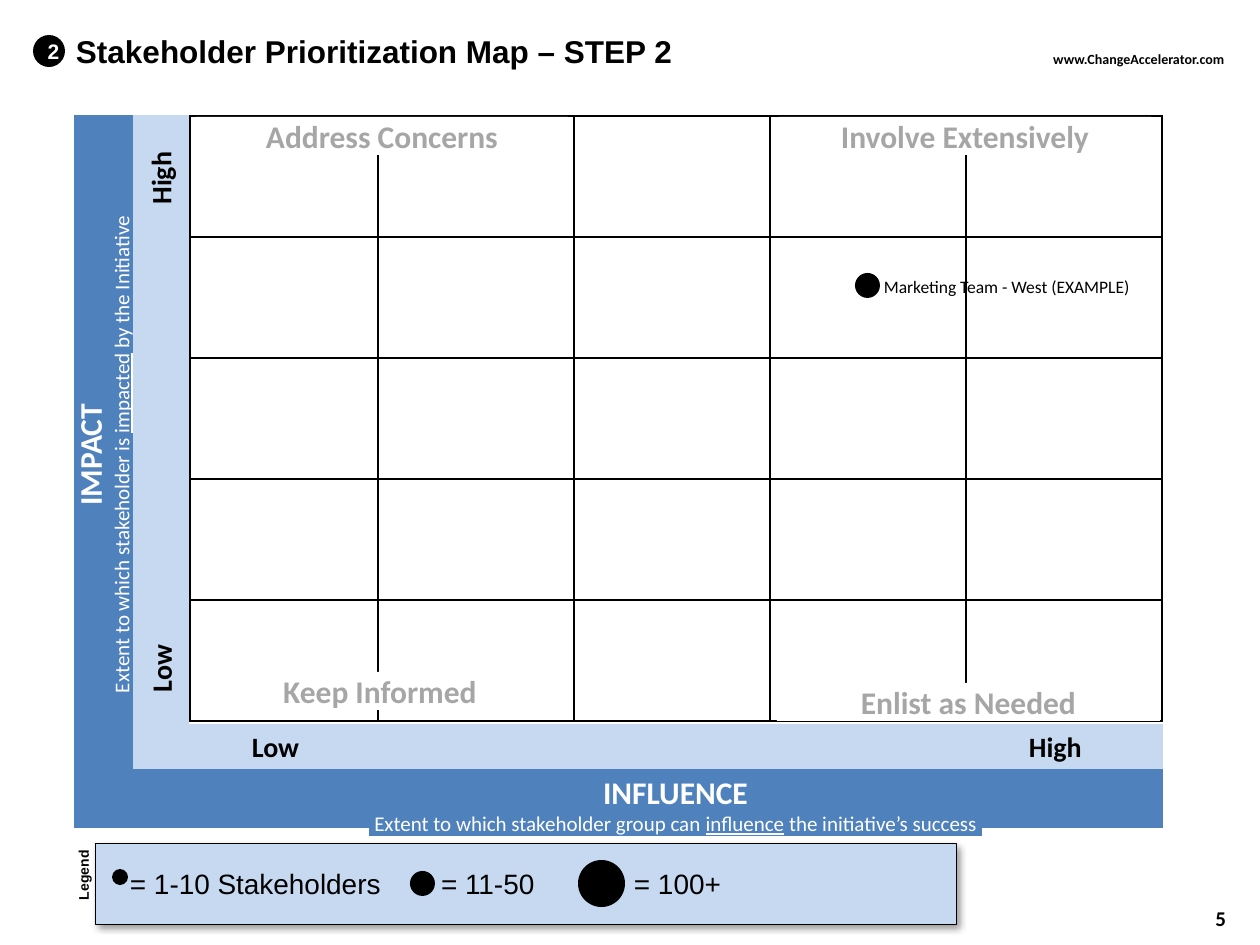
import pptx
import pptx.util
import pptx.dml.color
import pptx.enum.shapes
import pptx.enum.text
import pptx.oxml
import pptx.oxml.ns

SCALE = 914400 / 126
BLACK, WHITE, GREY = "000000", "FFFFFF", "A6A6A6"
BLUE, PALE = "4F81BD", "C6D9F1"
KIND = pptx.enum.shapes.MSO_SHAPE
ALIGN = {"l": pptx.enum.text.PP_ALIGN.LEFT, "c": pptx.enum.text.PP_ALIGN.CENTER,
         "r": pptx.enum.text.PP_ALIGN.RIGHT}
ANCHOR = pptx.enum.text.MSO_ANCHOR
PAD = (13, 6, 13, 6)
FLAT = (0, 0, 0, 0)


def px(n):
    return pptx.util.Emu(round(n * SCALE))


def color(code):
    return pptx.dml.color.RGBColor.from_string(code)


def node(tag, inner="", attrs=""):
    return pptx.oxml.parse_xml(
        f"<a:{tag} {pptx.oxml.ns.nsdecls('a')} {attrs}>{inner}</a:{tag}>")


def paint(fill, code):
    """Fill with a colour, or with nothing when code is None."""
    if code is None:
        fill.background()
    else:
        fill.solid()
        fill.fore_color.rgb = color(code)


def shape(slide, box, fill, kind=KIND.RECTANGLE):
    item = slide.shapes.add_shape(kind, *map(px, box))
    item.shadow.inherit = False
    paint(item.fill, fill)
    item.line.fill.background()
    return item


def dot(slide, box):
    return shape(slide, box, BLACK, KIND.OVAL)


def label(slide, box, turn=0):
    item = slide.shapes.add_textbox(*map(px, box))
    item.rotation = turn
    return item


def write(item, paras, size, ink=BLACK, font="Calibri", bold=False, align="l",
          pad=FLAT, wrap=False, middle=False, tabs=()):
    """Write paragraphs made of (text, changes) runs; a run of "\\n" breaks the line."""
    frame = item.text_frame
    frame.word_wrap = wrap
    frame.vertical_anchor = ANCHOR.MIDDLE if middle else ANCHOR.TOP
    frame.margin_left, frame.margin_top, frame.margin_right, frame.margin_bottom = map(px, pad)
    for i, runs in enumerate(paras):
        para = frame.add_paragraph() if i else frame.paragraphs[0]
        para.alignment = ALIGN[align]
        if tabs:
            stops = "".join(f'<a:tab pos="{px(t)}" algn="l"/>' for t in tabs)
            para._p.get_or_add_pPr().append(node("tabLst", stops))
        for text, change in runs:
            if text == "\n":
                para.add_line_break()
                continue
            run = para.add_run()
            run.text = text
            run.font.name = font
            run.font.size = pptx.util.Pt(change.get("size", size))
            run.font.bold = change.get("bold", bold)
            run.font.color.rgb = color(ink)
            if change.get("under"):
                run.font.underline = True


def plain(text):
    return [[(text, {})]]


def table(slide, box, cols, rows, line=None):
    """Add an unfilled table, with black cell borders of the given width in points."""
    grid = slide.shapes.add_table(len(rows), len(cols), *map(px, box)).table
    grid.first_row = grid.horz_banding = False
    for col, wide in zip(grid.columns, cols):
        col.width = px(wide)
    for row, tall in zip(grid.rows, rows):
        row.height = px(tall)
    ink = f'<a:solidFill><a:srgbClr val="{BLACK}"/></a:solidFill>' if line else "<a:noFill/>"
    for cell in grid.iter_cells():
        cell.margin_left = cell.margin_top = cell.margin_right = cell.margin_bottom = 0
        for side in ("lnL", "lnR", "lnT", "lnB"):
            cell._tc.get_or_add_tcPr().append(
                node(side, ink, f'w="{pptx.util.Pt(line or 0)}"'))
        paint(cell.fill, None)
    return grid


def header(slide, box):
    x, y, w, h = box
    write(label(slide, (x + 30, y, w - 76, 60)),
          plain("Stakeholder Prioritization Map – STEP 2"), 18,
          font="Arial", bold=True, pad=PAD, wrap=True, middle=True)
    write(dot(slide, (x, y + 14, 32, 32)), plain("2"), 12, WHITE, "Arial", True, "c",
          pad=(9, 0, 0, 0), middle=True)
    write(label(slide, (x + w - 222, y + 24, 222, 30)),
          plain("www.ChangeAccelerator.com"), 8, bold=True, align="c", pad=PAD, wrap=True)


def axes(slide, box):
    """Draw the L-shaped bands for impact and influence."""
    x, y, w, h = box
    band = table(slide, box, (59, 56, 487, 487), (314, 295, 45, 59))
    for start, end, fill in (((0, 0), (3, 0), BLUE), ((0, 1), (1, 1), PALE),
                             ((2, 1), (2, 3), PALE), ((3, 1), (3, 3), BLUE)):
        band.cell(*start).merge(band.cell(*end))
        paint(band.cell(*start).fill, fill)

    for text, left, top, wide, turn in (
            ("High", 955, 615, 53, 0), ("Low", 178, 615, 48, 0),
            ("High", 60, 46, 53, 270), ("Low", 63, 536, 48, 270)):
        write(label(slide, (x + left, y + top, wide, 34), turn), plain(text), 16, bold=True)

    thin = {"size": 12, "bold": False}
    link = {**thin, "under": True}
    write(shape(slide, (x + 295, y + 658, 613, 63), BLUE),
          [[("INFLUENCE", {}), ("\n", {}),
            ("Extent to which stakeholder group can ", thin), ("influence", link),
            (" the initiative’s success", thin)]], 18, WHITE, bold=True, align="c")
    write(label(slide, (x - 214, y + 308, 484, 63), 270),
          [[("IMPACT", {})],
           [("Extent to which stakeholder is ", thin), ("impacted", link),
            (" by the Initiative", thin)]], 18, WHITE, bold=True, align="c")


def matrix(slide, box):
    x, y, w, h = box
    table(slide, box, [188] + [196] * 4, [h // 5] * 5, line=1)
    for text, left, top, wide in (
            ("Involve Extensively", 589, 1, 372), ("Address Concerns", 6, 1, 372),
            ("Enlist as Needed", 587, 567, 383), ("Keep Informed", 20, 556, 340)):
        write(shape(slide, (x + left, y + top, wide, 38), WHITE),
              plain(text), 18, GREY, bold=True, align="c", wrap=True)
    dot(slide, (x + 665, y + 157, 25, 25))
    write(label(slide, (x + 681, y + 154, 278, 34)),
          plain("Marketing Team - West (EXAMPLE)"), 10, pad=PAD, wrap=True)


def legend(slide, box):
    x, y, w, h = box
    panel = shape(slide, box, PALE)
    panel.line.color.rgb = color(BLACK)
    panel.line.width = pptx.util.Pt(0.25)
    blur, dist = pptx.util.Pt(4), pptx.util.Pt(3)
    glow = panel._element.spPr.find(pptx.oxml.ns.qn("a:effectLst"))
    glow.append(node("outerShdw",
                     f'<a:srgbClr val="{BLACK}"><a:alpha val="40000"/></a:srgbClr>',
                     f'blurRad="{blur}" dist="{dist}" dir="2700000" algn="tl" rotWithShape="0"'))
    write(label(slide, (x - 63, y + 17, 850, 47)),
          plain("\t= 1-10 Stakeholders\t= 11-50\t= 100+"), 16, font="Arial",
          pad=PAD, wrap=True, tabs=(85, 396, 589))
    for left, top, size in ((17, 26, 16), (315, 28, 25), (483, 17, 47)):
        dot(slide, (x + left, y + top, size, size))
    write(label(slide, (x - 49, y + 17, 76, 30), 270), plain("Legend"), 8,
          font="Arial", bold=True, pad=PAD)


def main():
    deck = pptx.Presentation()
    deck.slide_width, deck.slide_height = px(1260), px(945)
    slide = deck.slides.add_slide(deck.slide_layouts[6])
    legend(slide, (95, 843, 861, 81))
    axes(slide, (74, 115, 1089, 713))
    matrix(slide, (190, 116, 972, 605))
    header(slide, (33, 21, 1217, 60))
    write(label(slide, (945, 893, 294, 50)), plain("5"), 12, bold=True, align="r",
          pad=PAD, wrap=True, middle=True)
    deck.save("out.pptx")


if __name__ == "__main__":
    main()
